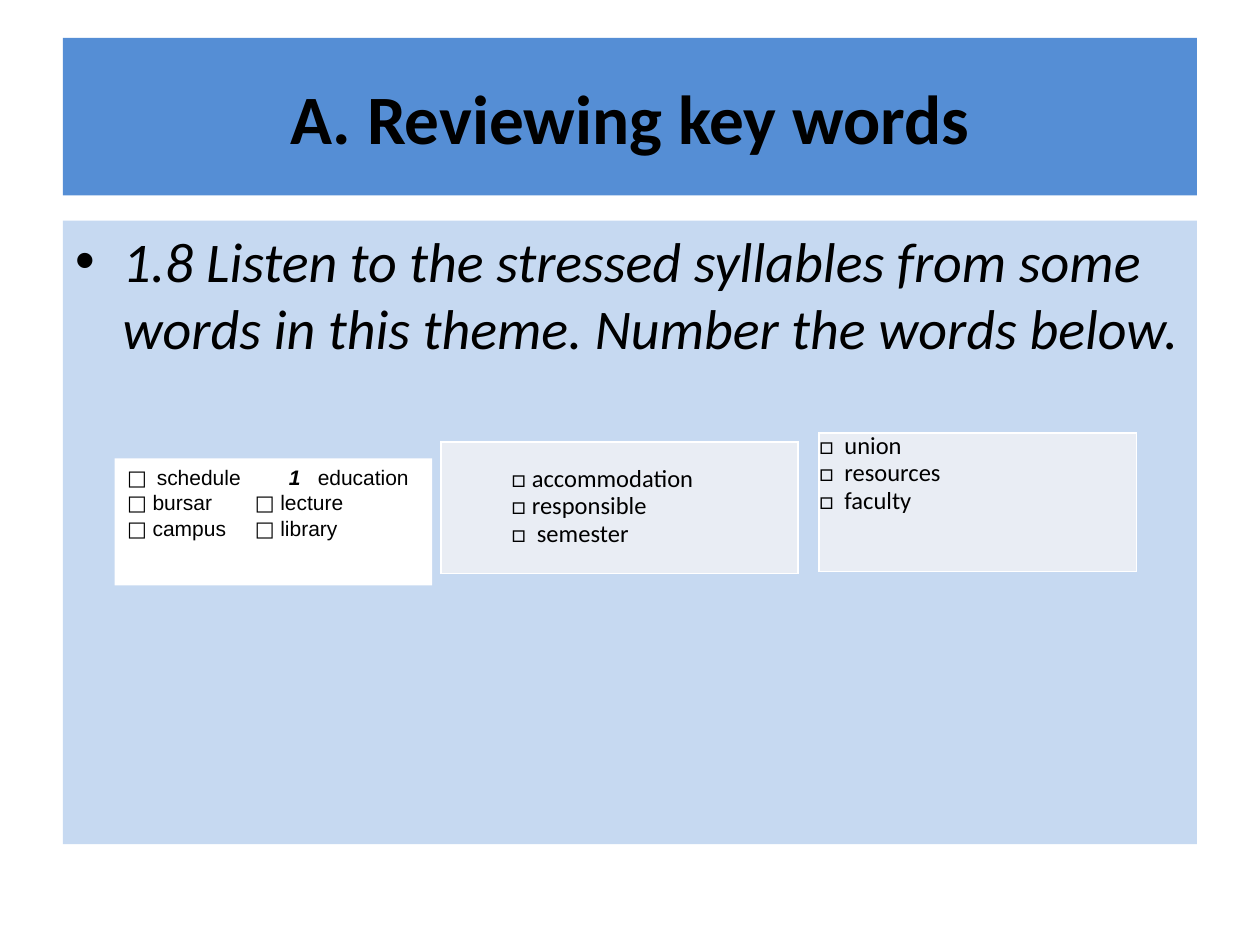
from dataclasses import dataclass

from lxml.etree import SubElement
from pptx import Presentation
from pptx.dml.color import RGBColor
from pptx.enum.text import MSO_ANCHOR, PP_ALIGN
from pptx.oxml.ns import qn
from pptx.util import Pt


@dataclass(frozen=True)
class Theme:
    """Colours, fonts and type sizes of the slide."""

    ink: RGBColor = RGBColor(0, 0, 0)
    white: RGBColor = RGBColor(255, 255, 255)
    banner: RGBColor = RGBColor(0x55, 0x8E, 0xD5)
    panel: RGBColor = RGBColor(0xC6, 0xD9, 0xF1)
    cell: RGBColor = RGBColor(0xE9, 0xED, 0xF4)
    main_font: str = "Calibri"
    list_font: str = "Arial"
    checkbox_font: str = "Cambria"
    title_size: float = 39.6
    task_size: float = 32
    word_size: float = 14
    list_size: float = 12
    word_leading: float = 15.8


THEME = Theme()
CHECKBOX = "□"
ANSWER = "1"


def set_font(font, name, size, bold=None, italic=None):
    """Apply a typeface, size and the ink colour."""
    font.name, font.size = name, Pt(size)
    font.bold, font.italic = bold, italic
    font.color.rgb = THEME.ink


def set_tabs(paragraph, stops):
    """Give a paragraph left tab stops."""
    tab_list = SubElement(paragraph._p.get_or_add_pPr(), qn("a:tabLst"))
    for stop in stops:
        SubElement(tab_list, qn("a:tab"), pos=str(Pt(stop)), algn="l")


def set_bullet(paragraph, indent):
    """Give a paragraph a hanging round bullet."""
    properties = paragraph._p.get_or_add_pPr()
    properties.set("marL", str(Pt(indent)))
    properties.set("indent", str(-Pt(indent)))
    SubElement(properties, qn("a:buFont"), typeface=THEME.list_font)
    SubElement(properties, qn("a:buChar"), char="•")


def add_panel(slide, bounds, colour, anchor=MSO_ANCHOR.TOP):
    """Add a filled text panel and return its text frame."""
    panel = slide.shapes.add_textbox(*map(Pt, bounds))
    panel.fill.solid()
    panel.fill.fore_color.rgb = colour
    panel.text_frame.word_wrap = True
    panel.text_frame.vertical_anchor = anchor
    return panel.text_frame


def add_title(slide, bounds, wording):
    """Add the centred banner title."""
    title = add_panel(slide, bounds, THEME.banner, MSO_ANCHOR.MIDDLE).paragraphs[0]
    title.text = wording
    title.alignment = PP_ALIGN.CENTER
    set_font(title.font, THEME.main_font, THEME.title_size, bold=True)


def add_task(slide, bounds, wording):
    """Add the bulleted instruction panel."""
    task = add_panel(slide, bounds, THEME.panel).paragraphs[0]
    task.text = wording
    set_bullet(task, 27)
    set_font(task.font, THEME.main_font, THEME.task_size, italic=True)


def add_checklist(slide, bounds, rows):
    """Add a white checklist whose rows pair tab stops with text pieces."""
    frame = add_panel(slide, bounds, THEME.white)
    for index, (stops, pieces) in enumerate(rows):
        row = frame.add_paragraph() if index else frame.paragraphs[0]
        set_tabs(row, stops)
        set_font(row.font, THEME.list_font, THEME.list_size)
        for piece in pieces:
            run = row.add_run()
            run.text = piece
            if piece == CHECKBOX:
                run.font.name = THEME.checkbox_font
            elif piece == ANSWER:
                run.font.bold = run.font.italic = True


def set_borders(cell):
    """Draw thin white lines around a cell."""
    properties = cell._tc.get_or_add_tcPr()
    for position, side in enumerate(("lnL", "lnR", "lnT", "lnB")):
        line = properties.makeelement(qn(f"a:{side}"), {"w": str(Pt(1))})
        fill = SubElement(line, qn("a:solidFill"))
        SubElement(fill, qn("a:srgbClr"), val=str(THEME.white))
        properties.insert(position, line)


def add_word_table(slide, bounds, words, margins, stop):
    """Add a one-cell table of words to number."""
    table = slide.shapes.add_table(1, 1, *map(Pt, bounds)).table
    table.first_row = table.horz_banding = False
    cell = table.cell(0, 0)
    cell.fill.solid()
    cell.fill.fore_color.rgb = THEME.cell
    set_borders(cell)
    cell.margin_left = cell.margin_right = Pt(margins[0])
    cell.margin_top = cell.margin_bottom = Pt(margins[1])
    cell.text = "\n".join(CHECKBOX + word for word in words)
    for entry in cell.text_frame.paragraphs:
        entry.line_spacing = Pt(THEME.word_leading)
        set_tabs(entry, [stop])
        set_font(entry.font, THEME.main_font, THEME.word_size)


def main():
    """Build and save the key words slide."""
    deck = Presentation()
    deck.slide_width, deck.slide_height = Pt(720), Pt(540)
    slide = deck.slides.add_slide(deck.slide_layouts[6])

    add_title(slide, (36, 21.6, 648, 90), "A. Reviewing key words")
    add_task(
        slide,
        (36, 126, 648, 356.4),
        "1.8 Listen to the stressed syllables from some words in this theme. "
        "Number the words below.",
    )
    add_checklist(
        slide,
        (65.5, 262, 181.4, 72.5),
        [
            ([17, 92.5, 109], [CHECKBOX, "\tschedule\t", ANSWER, "\teducation"]),
            ([73], [CHECKBOX, " bursar\t", CHECKBOX, " lecture"]),
            ([73], [CHECKBOX, " campus\t", CHECKBOX, " library"]),
        ],
    )
    add_word_table(
        slide,
        (252, 252.7, 204, 74.9),
        [" accommodation", " responsible", "\tsemester"],
        (40.3, 13.7),
        14.5,
    )
    add_word_table(
        slide,
        (468, 247.5, 181.4, 79.2),
        ["\tunion", "\tresources", "\tfaculty"],
        (0, 0),
        14.5,
    )
    deck.save("out.pptx")


if __name__ == "__main__":
    main()
